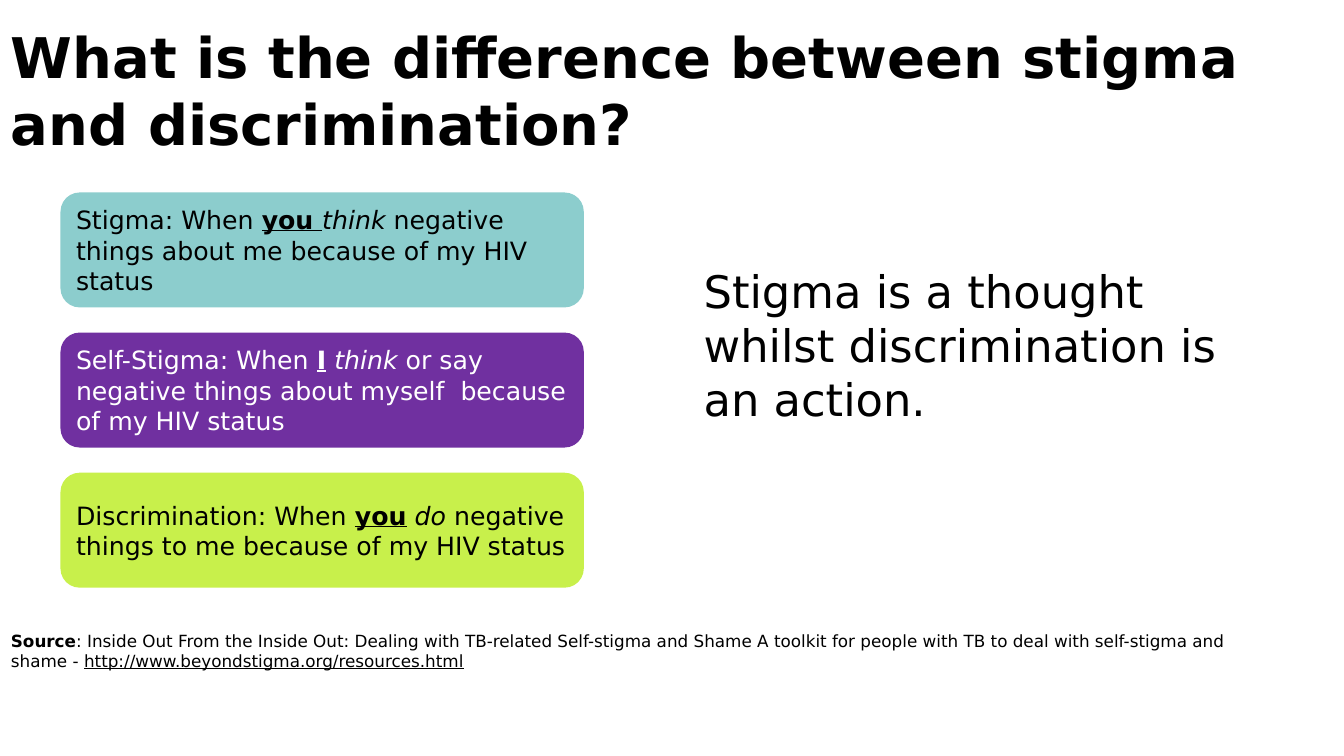
from pptx import Presentation
from pptx.dml.color import RGBColor
from pptx.enum import shapes, text
from pptx.util import Inches, Pt

THEME = {
    "font": "DejaVu Sans",
    "black": "000000", "white": "FFFFFF",
    "teal": "8CCDCD", "purple": "7030A0", "lime": "C8F04B",
    "title": 40, "statement": 32, "card": 18, "source": 12,
}

# Each run is (text, style letters): b bold, i italic, u underlined.
TITLE = [[("What is the difference between stigma and discrimination?", "b")]]
SOURCE = [[
    ("Source", "b"),
    (": Inside Out From the Inside Out: Dealing with TB-related Self-stigma and Shame "
     "A toolkit for people with TB to deal with self-stigma and shame - ", ""),
    ("http://www.beyondstigma.org/resources.html", "u"),
]]
STATEMENT = [
    [("Stigma is a thought", "")],
    [("whilst discrimination is an action.", "")],
]
CARDS = [
    ("teal", "black", [("Stigma: When ", ""), ("you ", "bu"), ("think", "i"),
                       (" negative things about me because of my HIV status", "")]),
    ("purple", "white", [("Self-Stigma: When ", ""), ("I", "bu"), (" ", ""), ("think", "i"),
                         (" or say negative things about myself  because of my HIV status", "")]),
    ("lime", "black", [("Discrimination: When ", ""), ("you", "bu"), (" ", ""), ("do", "i"),
                       (" negative things to me because of my HIV status", "")]),
]

# Left, top, width, height in inches
TEXT_BOXES = [
    (TITLE, "title", (0.01, 0.17, 12.79, 1.45)),
    (SOURCE, "source", (0.01, 6.21, 12.61, 0.5)),
    (STATEMENT, "statement", (6.88, 2.57, 5.49, 1.72)),
]
CARD_LEFT, CARD_TOP, CARD_WIDTH, CARD_HEIGHT = 0.6, 1.91, 5.19, 1.14
CARD_PITCH = 1.39


def color(name):
    return RGBColor.from_string(THEME[name])


def write(tf, paragraphs, size, ink="black"):
    tf.word_wrap = True
    for i, runs in enumerate(paragraphs):
        p = tf.add_paragraph() if i else tf.paragraphs[0]
        p.alignment = text.PP_ALIGN.LEFT
        for words, style in runs:
            r = p.add_run()
            r.text = words
            r.font.name = THEME["font"]
            r.font.size = Pt(THEME[size])
            r.font.color.rgb = color(ink)
            r.font.bold = "b" in style
            r.font.italic = "i" in style
            r.font.underline = "u" in style


def add_card(s, top, fill, ink, runs):
    sp = s.shapes.add_shape(
        shapes.MSO_SHAPE.ROUNDED_RECTANGLE,
        *map(Inches, (CARD_LEFT, top, CARD_WIDTH, CARD_HEIGHT)))
    sp.shadow.inherit = False
    sp.fill.solid()
    sp.fill.fore_color.rgb = color(fill)
    sp.line.fill.background()
    sp.text_frame.vertical_anchor = text.MSO_ANCHOR.MIDDLE
    write(sp.text_frame, [runs], "card", ink)


def main():
    prs = Presentation()
    prs.slide_width, prs.slide_height = Inches(13.33), Inches(7.5)
    s = prs.slides.add_slide(prs.slide_layouts[6])
    for paragraphs, size, box in TEXT_BOXES:
        write(s.shapes.add_textbox(*map(Inches, box)).text_frame, paragraphs, size)
    for i, card in enumerate(CARDS):
        add_card(s, CARD_TOP + i * CARD_PITCH, *card)
    prs.save("out.pptx")


if __name__ == "__main__":
    main()
